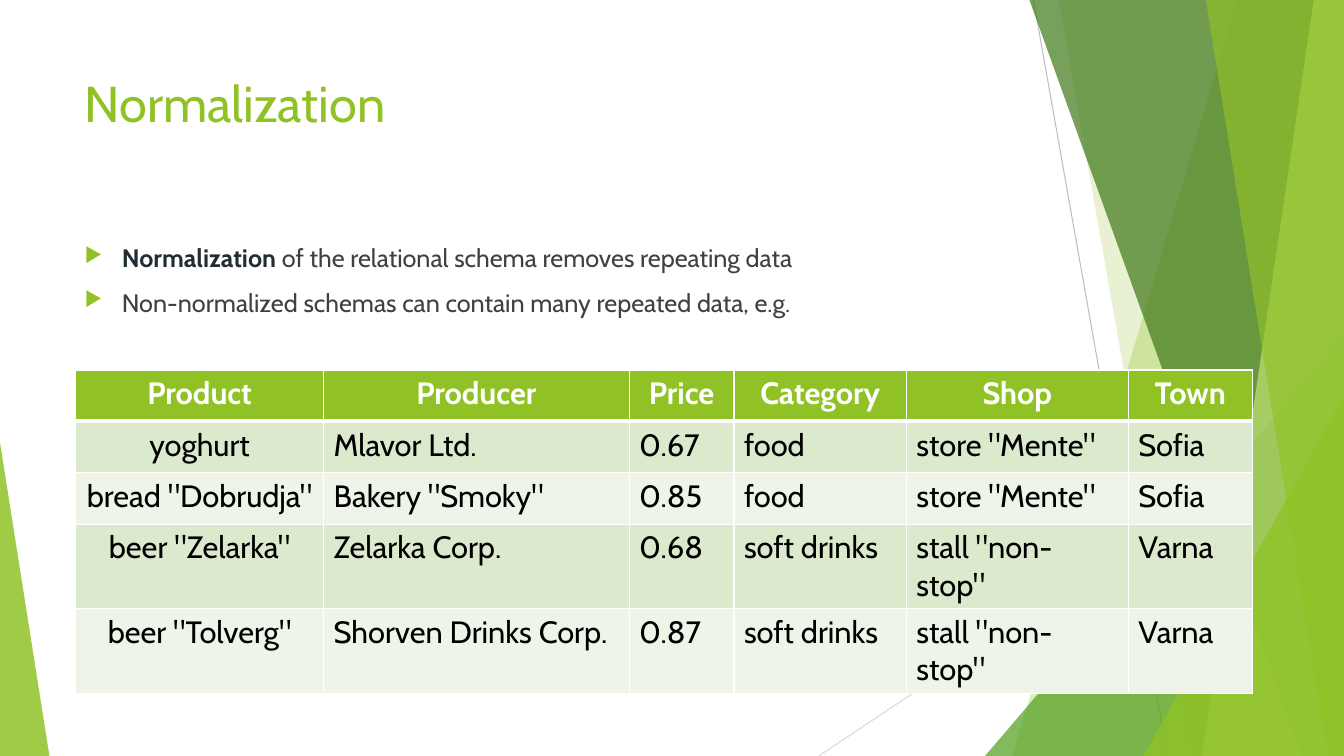
from dataclasses import dataclass

from lxml import etree
from pptx import Presentation
from pptx.dml.color import RGBColor
from pptx.enum.shapes import MSO_CONNECTOR, MSO_SHAPE
from pptx.enum.text import MSO_ANCHOR, PP_ALIGN
from pptx.oxml.ns import qn
from pptx.util import Inches, Pt

STRAIGHT = MSO_CONNECTOR.STRAIGHT
TRIANGLE = MSO_SHAPE.ISOSCELES_TRIANGLE
TOP = MSO_ANCHOR.TOP
CENTER = PP_ALIGN.CENTER
LEFT = PP_ALIGN.LEFT

WIDTH, HEIGHT = 13.33, 7.5


@dataclass(frozen=True)
class Theme:
    font: str = "Cabin"
    title_size: int = 36
    body_size: int = 18
    table_size: int = 22
    white: str = "FFFFFF"
    black: str = "000000"
    body: str = "404040"
    strong: str = "212D32"
    accent: str = "90C226"
    green: str = "54A021"
    dark_green: str = "3F7819"
    light_green: str = "C0E474"
    bands: tuple = ("DBE9CD", "EEF4E8")
    dark_line: str = "BFBFBF"
    light_line: str = "D9D9D9"


def set_attributes(target, values):
    for name, value in values.items():
        setattr(target, name, value)


class SlideBuilder:
    def __init__(self, slide, theme):
        self.slide = slide
        self.theme = theme

    def line(self, start, end, color):
        points = [Inches(value) for value in (*start, *end)]
        connector = self.slide.shapes.add_connector(STRAIGHT, *points)
        connector.line.color.rgb = RGBColor.from_string(color)
        connector.line.width = Pt(0.75)
        etree.SubElement(connector.element.spPr, qn("a:effectLst"))

    def paint(self, shape, color, opacity):
        shape.shadow.inherit = False
        shape.line.fill.background()
        shape.fill.solid()
        shape.fill.fore_color.rgb = RGBColor.from_string(color)
        color_element = next(shape.element.spPr.iter(qn("a:srgbClr")))
        etree.SubElement(color_element, qn("a:alpha"), val=str(opacity * 1000))

    def panel(self, top_left, bottom_left, color, opacity):
        corners = [(top_left, 0), (WIDTH, 0), (WIDTH, HEIGHT), (bottom_left, HEIGHT)]
        points = [(Inches(x), Inches(y)) for x, y in corners]
        builder = self.slide.shapes.build_freeform(*points[0])
        builder.add_line_segments(points[1:], close=True)
        self.paint(builder.convert_to_shape(), color, opacity)

    def triangle(self, left, top, width, apex, color, opacity):
        box = [Inches(value) for value in (left, top, width, HEIGHT - top)]
        shape = self.slide.shapes.add_shape(TRIANGLE, *box)
        shape.adjustments[0] = apex
        self.paint(shape, color, opacity)

    def run(self, paragraph, text, size, color, bold=False):
        run = paragraph.add_run()
        run.text = text
        set_attributes(run.font, {"name": self.theme.font, "size": Pt(size), "bold": bold})
        run.font.color.rgb = RGBColor.from_string(color)

    def text_frame(self, left, top, width, height):
        box = [Inches(value) for value in (left, top, width, height)]
        frame = self.slide.shapes.add_textbox(*box).text_frame
        set_attributes(frame, {"word_wrap": True, "vertical_anchor": TOP})
        return frame

    def title(self, text, box):
        paragraph = self.text_frame(*box).paragraphs[0]
        self.run(paragraph, text, self.theme.title_size, self.theme.accent)

    def bullets(self, items, box):
        frame = self.text_frame(*box)
        for index, parts in enumerate(items):
            paragraph = frame.add_paragraph() if index else frame.paragraphs[0]
            paragraph.space_before = Pt(10)
            for text, color, bold in parts:
                self.run(paragraph, text, self.theme.body_size, color, bold)
            self.bullet_mark(paragraph)

    def bullet_mark(self, paragraph):
        properties = paragraph._p.get_or_add_pPr()
        properties.set("marL", str(Inches(0.37)))
        properties.set("indent", str(-Inches(0.37)))
        color = etree.SubElement(properties, qn("a:buClr"))
        etree.SubElement(color, qn("a:srgbClr"), val=self.theme.accent)
        etree.SubElement(properties, qn("a:buSzPct"), val="80000")
        etree.SubElement(properties, qn("a:buChar"), char="▶")

    def table(self, rows, left, top, widths, heights):
        box = [Inches(value) for value in (left, top, sum(widths), sum(heights))]
        table = self.slide.shapes.add_table(len(rows), len(widths), *box).table
        table.horz_banding = False
        for column, width in zip(table.columns, widths):
            column.width = Inches(width)
        for row, height in zip(table.rows, heights):
            row.height = Inches(height)
        for row_index, texts in enumerate(rows):
            for column_index, text in enumerate(texts):
                self.cell(table.cell(row_index, column_index), text, row_index, column_index)

    def cell(self, cell, text, row, column):
        theme = self.theme
        header = row == 0
        fill = theme.accent if header else theme.bands[(row - 1) % 2]
        cell.fill.solid()
        cell.fill.fore_color.rgb = RGBColor.from_string(fill)
        paragraph = cell.text_frame.paragraphs[0]
        paragraph.alignment = CENTER if header or column == 0 else LEFT
        self.run(paragraph, text, theme.table_size, theme.white if header else theme.black, header)
        borders = {"L": 1, "R": 1, "T": 3 if row == 1 else 1, "B": 3 if header else 1}
        properties = cell._tc.get_or_add_tcPr()
        for index, (side, width) in enumerate(borders.items()):
            border = etree.Element(qn(f"a:ln{side}"), w=str(Pt(width)))
            solid = etree.SubElement(border, qn("a:solidFill"))
            etree.SubElement(solid, qn("a:srgbClr"), val=theme.white)
            properties.insert(index, border)


def main():
    presentation = Presentation()
    size = {"slide_width": Inches(WIDTH), "slide_height": Inches(HEIGHT)}
    set_attributes(presentation, size)
    theme = Theme()
    slide = presentation.slides.add_slide(presentation.slide_layouts[6])
    builder = SlideBuilder(slide, theme)

    builder.line((10.25, 0), (11.58, HEIGHT), theme.dark_line)
    builder.line((WIDTH, 4.03), (8.12, HEIGHT), theme.light_line)
    builder.panel(12.27, 10.04, theme.accent, 30)
    builder.panel(10.5, 11.82, theme.accent, 20)
    builder.triangle(9.77, 3.33, 3.56, 1, theme.green, 72)
    builder.panel(10.21, 12.91, theme.dark_green, 70)
    builder.panel(13.03, 11.92, theme.light_green, 70)
    builder.panel(11.96, 13.17, theme.accent, 65)
    builder.triangle(11.34, 3.93, 1.99, 1, theme.accent, 80)
    builder.triangle(0, 4.39, 0.49, 0, theme.accent, 85)

    builder.title("Normalization", (0.74, 0.67, 9.4, 1.44))
    bullets = [
        [
            ("Normalization", theme.strong, True),
            (" of the relational schema removes repeating data", theme.body, False),
        ],
        [("Non-normalized schemas can contain many repeated data, e.g.", theme.body, False)],
    ]
    builder.bullets(bullets, (0.74, 2.36, 9.4, 4.24))

    rows = [
        ("Product", "Producer", "Price", "Category", "Shop", "Town"),
        ("yoghurt", "Mlavor Ltd.", "0.67", "food", 'store "Mente"', "Sofia"),
        ('bread "Dobrudja"', 'Bakery "Smoky"', "0.85", "food", 'store "Mente"', "Sofia"),
        ('beer "Zelarka"', "Zelarka Corp.", "0.68", "soft drinks", 'stall "non-stop"', "Varna"),
        ('beer "Tolverg"', "Shorven Drinks Corp.", "0.87", "soft drinks", 'stall "non-stop"', "Varna"),
    ]
    widths = [2.46, 3.03, 1.04, 1.71, 2.2, 1.23]
    heights = [0.51, 0.51, 0.51, 0.84, 0.84]
    builder.table(rows, 0.75, 3.67, widths, heights)
    presentation.save("out.pptx")


if __name__ == "__main__":
    main()
